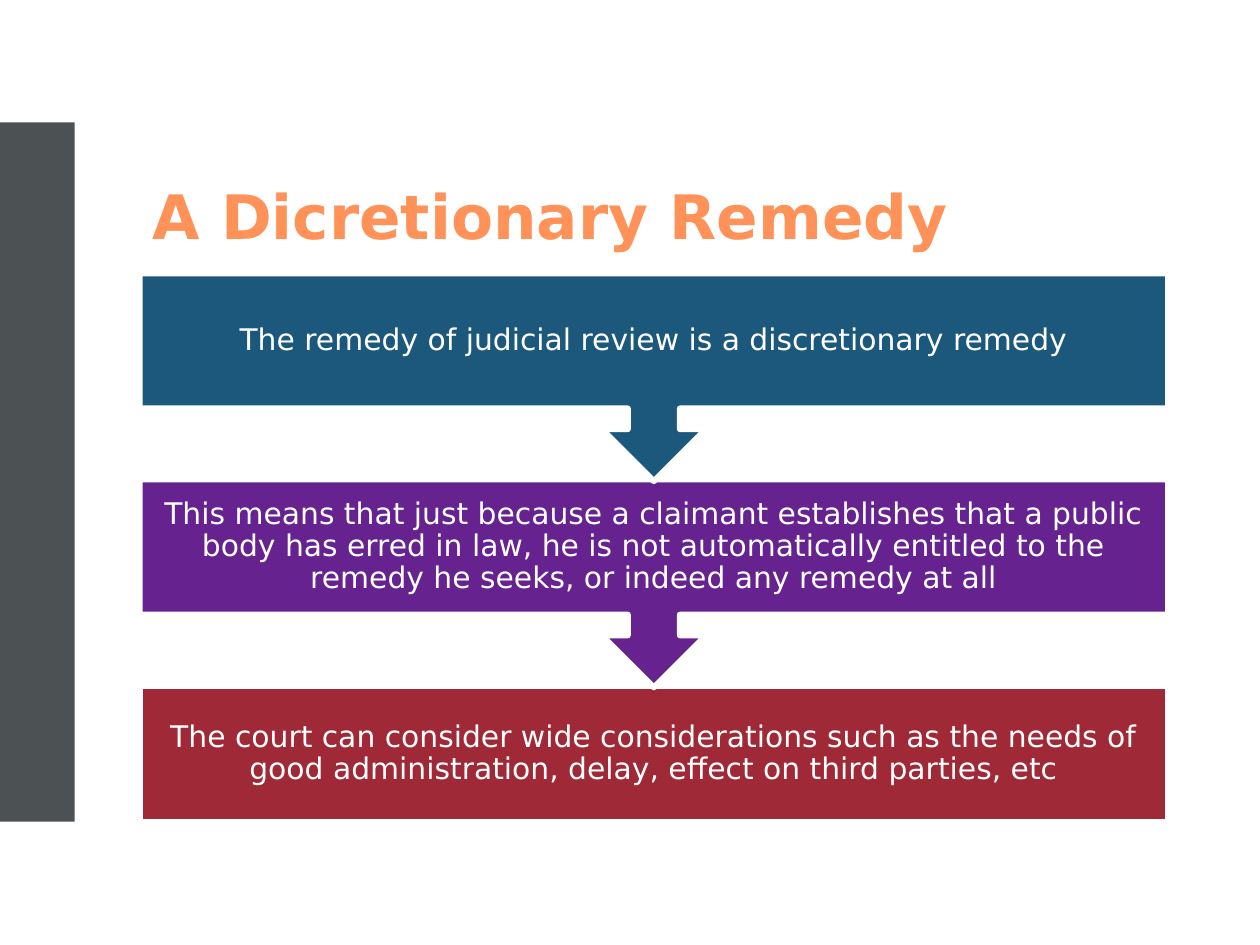
from dataclasses import dataclass

from pptx import Presentation
from pptx.dml.color import RGBColor
from pptx.enum.shapes import MSO_SHAPE
from pptx.enum.text import MSO_ANCHOR, PP_ALIGN
from pptx.util import Pt

TITLE = "A Dicretionary Remedy"
STEPS = [
    ("The remedy of judicial review is a discretionary remedy", "1B587C"),
    ("This means that just because a claimant establishes that a public body "
     "has erred in law, he is not automatically entitled to the remedy he "
     "seeks, or indeed any remedy at all", "66228E"),
    ("The court can consider wide considerations such as the needs of good "
     "administration, delay, effect on third parties, etc", "9F2936"),
]


@dataclass(frozen=True)
class Theme:
    font: str = "DejaVu Sans"
    title_color: str = "FF9258"
    text_color: str = "FFFFFF"
    outline: str = "FFFFFF"
    sidebar: str = "4C5254"
    title_size: float = 35
    step_size: float = 17
    outline_width: float = 3.35


THEME = Theme()
LEFT, WIDTH = 79.9, 587.5
STEP_TOP, STEP_PITCH = 156.2, 117.8
CALLOUT_HEIGHT, BOX_HEIGHT = 118.8, 77.8


def write(frame, text, *, size, color, bold=False, align=PP_ALIGN.LEFT,
          anchor=MSO_ANCHOR.MIDDLE, inset=(7.2, 3.6), line_spacing=1.0):
    frame.word_wrap = True
    frame.vertical_anchor = anchor
    frame.margin_left = frame.margin_right = Pt(inset[0])
    frame.margin_top = frame.margin_bottom = Pt(inset[1])
    paragraph = frame.paragraphs[0]
    paragraph.alignment = align
    paragraph.line_spacing = line_spacing
    paragraph.space_before = Pt(0)
    run = paragraph.add_run()
    run.text = text
    run.font.name = THEME.font
    run.font.size = Pt(size)
    run.font.bold = bold
    run.font.color.rgb = RGBColor.from_string(color)


def add_block(slide, preset, left, top, width, height, fill, outline=None):
    block = slide.shapes.add_shape(preset, Pt(left), Pt(top), Pt(width), Pt(height))
    block.shadow.inherit = False
    block.fill.solid()
    block.fill.fore_color.rgb = RGBColor.from_string(fill)
    if outline:
        block.line.color.rgb = RGBColor.from_string(outline)
        block.line.width = Pt(THEME.outline_width)
    else:
        block.line.fill.background()
    return block


def add_title(slide):
    title = slide.shapes.title
    title.left, title.top = Pt(LEFT), Pt(41.8)
    title.width, title.height = Pt(WIDTH), Pt(105.8)
    write(title.text_frame, TITLE, size=THEME.title_size,
          color=THEME.title_color, bold=True, anchor=MSO_ANCHOR.BOTTOM)


def add_steps(slide):
    """Stack the steps from the bottom up, so each arrow lies over the next box."""
    last = len(STEPS) - 1
    for index, (text, fill) in reversed(list(enumerate(STEPS))):
        if index == last:
            preset, height = MSO_SHAPE.RECTANGLE, BOX_HEIGHT
        else:
            preset, height = MSO_SHAPE.DOWN_ARROW_CALLOUT, CALLOUT_HEIGHT
        step = add_block(slide, preset, LEFT, STEP_TOP + index * STEP_PITCH,
                         WIDTH, height, fill, THEME.outline)
        write(step.text_frame, text, size=THEME.step_size,
              color=THEME.text_color, align=PP_ALIGN.CENTER,
              inset=(9.4, 9.4), line_spacing=0.9)


def main():
    deck = Presentation()
    deck.slide_width, deck.slide_height = Pt(720), Pt(540)
    slide = deck.slides.add_slide(deck.slide_layouts[5])
    add_title(slide)
    add_block(slide, MSO_SHAPE.RECTANGLE, 0, 70, 42.6, 399.6, THEME.sidebar)
    add_steps(slide)
    deck.save("out.pptx")


if __name__ == "__main__":
    main()
